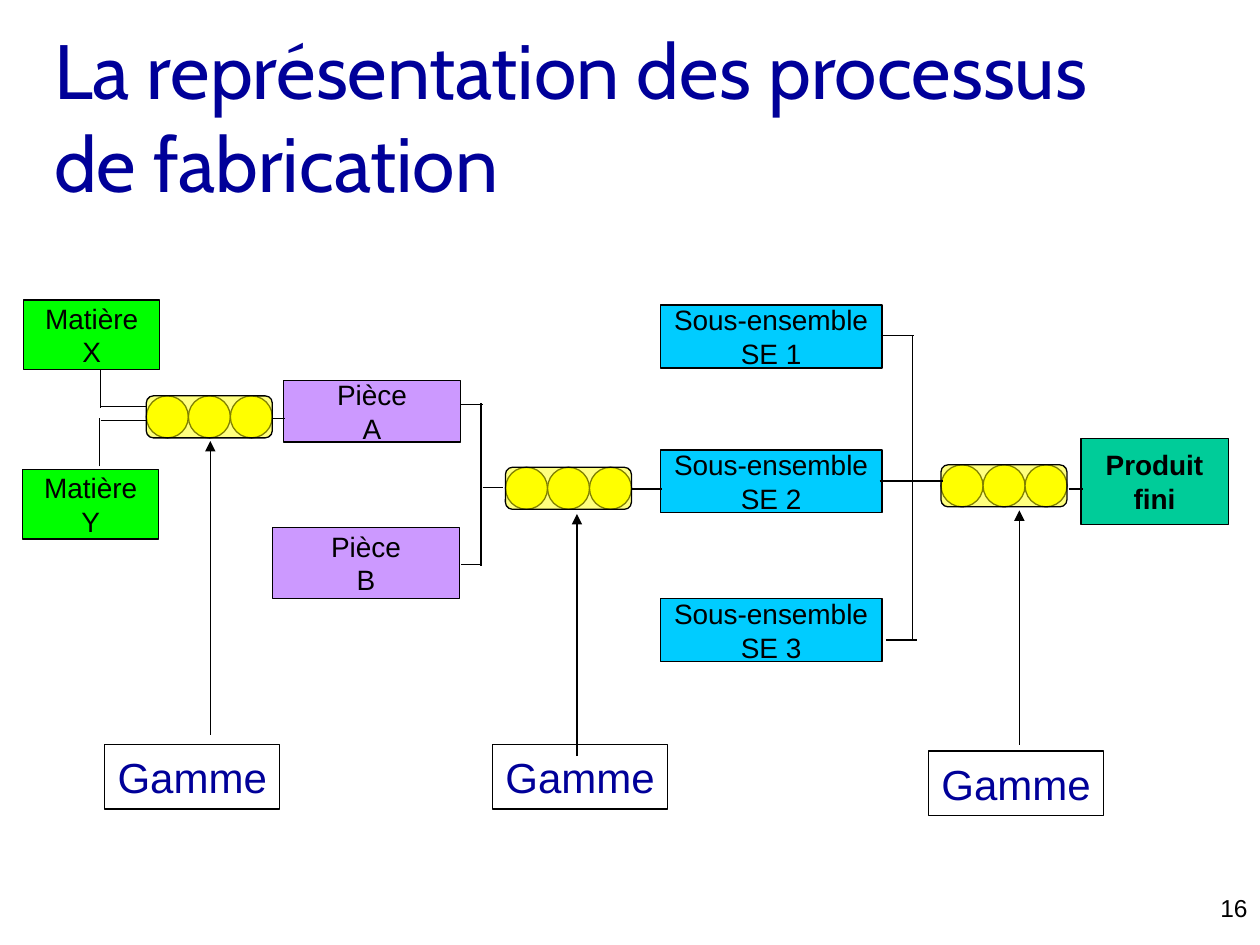
import dataclasses

import pptx
import pptx.dml.color
import pptx.enum.shapes
import pptx.enum.text
import pptx.oxml
import pptx.oxml.ns
import pptx.util
from pptx.util import Cm

Kind = pptx.enum.shapes.MSO_SHAPE
Align = pptx.enum.text.PP_ALIGN
Anchor = pptx.enum.text.MSO_ANCHOR
Rgb = pptx.dml.color.RGBColor.from_string


@dataclasses.dataclass
class Theme:
    head: str = "Cabin"
    body: str = "Arial"
    ink: str = "000000"
    navy: str = "000099"
    green: str = "00FF00"
    lilac: str = "CC99FF"
    cyan: str = "00CCFF"
    teal: str = "00CC99"
    yellow: str = "FFFF00"
    title: int = 44
    label: int = 24
    box: int = 16
    page: int = 14
    line: float = 0.75


theme = Theme()


def write(shape, text, size, color=theme.ink, font=theme.body,
          align=Align.CENTER, bold=False):
    frame = shape.text_frame
    frame.text = text
    frame.word_wrap = True
    frame.vertical_anchor = Anchor.MIDDLE
    for para in frame.paragraphs:
        para.alignment = align
        for run in para.runs:
            run.font.size = pptx.util.Pt(size)
            run.font.name = font
            run.font.bold = bold
            run.font.color.rgb = Rgb(color)


def draw(shapes, kind, left, top, width, height, fill=None):
    shape = shapes.add_shape(kind, Cm(left), Cm(top), Cm(width), Cm(height))
    shape.shadow.inherit = False
    if fill:
        shape.fill.solid()
        shape.fill.fore_color.rgb = Rgb(fill)
    else:
        shape.fill.background()
    shape.line.color.rgb = Rgb(theme.ink)
    shape.line.width = pptx.util.Pt(theme.line)
    return shape


deck = pptx.Presentation()
deck.slide_width, deck.slide_height = Cm(25.4), Cm(19.05)
slide = deck.slides.add_slide(deck.slide_layouts[6])
shapes = slide.shapes

# Page number and title
page = shapes.add_textbox(Cm(20.12), Cm(17.98), Cm(5.28), Cm(0.64))
write(page, "16", theme.page, align=Align.RIGHT)
title = shapes.add_textbox(Cm(0.84), Cm(0.84), Cm(23.93), Cm(2.97))
write(title, "La représentation des processus\vde fabrication", theme.title,
      theme.navy, theme.head, Align.LEFT)

# Materials, parts, sub-assemblies and finished product
boxes = [
    ("Matière\nX", 0.48, 6.05, 2.74, 1.4, theme.green),
    ("Matière\nY", 0.46, 9.47, 2.74, 1.4, theme.green),
    ("Pièce\nA", 5.72, 7.67, 3.56, 1.24, theme.lilac),
    ("Pièce\nB", 5.49, 10.64, 3.78, 1.42, theme.lilac),
    ("Produit fini", 21.79, 8.84, 2.97, 1.73, theme.teal),
]
for num, top in enumerate((6.15, 9.07, 12.07), 1):
    boxes.append((f"Sous-ensemble\nSE {num}", 13.31, top, 4.47, 1.27, theme.cyan))
for text, left, top, width, height, fill in boxes:
    box = draw(shapes, Kind.RECTANGLE, left, top, width, height, fill)
    write(box, text, theme.box, bold=fill == theme.teal)

# Process steps: three circles under a half-clear capsule
length = 2.54
disc = length / 3
for left, top in ((18.97, 9.37), (10.19, 9.42), (2.95, 7.98)):
    group = shapes.add_group_shape().shapes
    for col in range(3):
        draw(group, Kind.OVAL, left + col * disc, top, disc, disc, theme.yellow)
    cover = draw(group, Kind.ROUNDED_RECTANGLE, left, top, length, disc, theme.yellow)
    cover.adjustments[0] = 0.17
    tint = cover.fill._xPr.find(".//" + pptx.oxml.ns.qn("a:srgbClr"))
    tint.append(pptx.oxml.parse_xml(
        f'<a:alpha {pptx.oxml.ns.nsdecls("a")} val="50000"/>'))

# Routing labels
for left, top in ((18.72, 15.14), (9.93, 15.01), (2.11, 15.01)):
    label = draw(shapes, Kind.RECTANGLE, left, top, 3.53, 1.3)
    write(label, "Gamme", theme.label, theme.navy)
    label.text_frame.word_wrap = False

# Links between the steps, then arrows from the labels
links = [
    (2.03, 7.44, 2.03, 8.23),
    (2.03, 8.2, 2.95, 8.2),
    (2.01, 9.4, 2.01, 8.43),
    (2.03, 8.48, 2.95, 8.48),
    (5.49, 8.43, 5.74, 8.43),
    (9.7, 8.13, 9.7, 11.4),
    (9.3, 8.15, 9.73, 8.15),
    (9.3, 11.38, 9.7, 11.38),
    (9.73, 9.83, 10.13, 9.83),
    (12.73, 9.86, 13.34, 9.86),
    (18.39, 6.78, 18.39, 12.9),
    (17.75, 6.76, 18.42, 6.76),
    (17.73, 9.7, 19, 9.7),
    (17.86, 12.9, 18.49, 12.9),
    (21.54, 9.86, 21.84, 9.86),
]
arrows = [
    (4.24, 14.81, 4.24, 8.89),
    (11.63, 15.24, 11.63, 10.36),
    (20.55, 15.01, 20.55, 10.29),
]
for ends in links + arrows:
    link = shapes.add_connector(
        pptx.enum.shapes.MSO_CONNECTOR.STRAIGHT, *(Cm(end) for end in ends))
    link.line.color.rgb = Rgb(theme.ink)
    link.line.width = pptx.util.Pt(theme.line)
    if ends in arrows:
        link.line._get_or_add_ln().append(pptx.oxml.parse_xml(
            f'<a:tailEnd {pptx.oxml.ns.nsdecls("a")} type="triangle"/>'))
    link._element.spPr.append(pptx.oxml.parse_xml(
        f'<a:effectLst {pptx.oxml.ns.nsdecls("a")}/>'))

deck.save("out.pptx")
